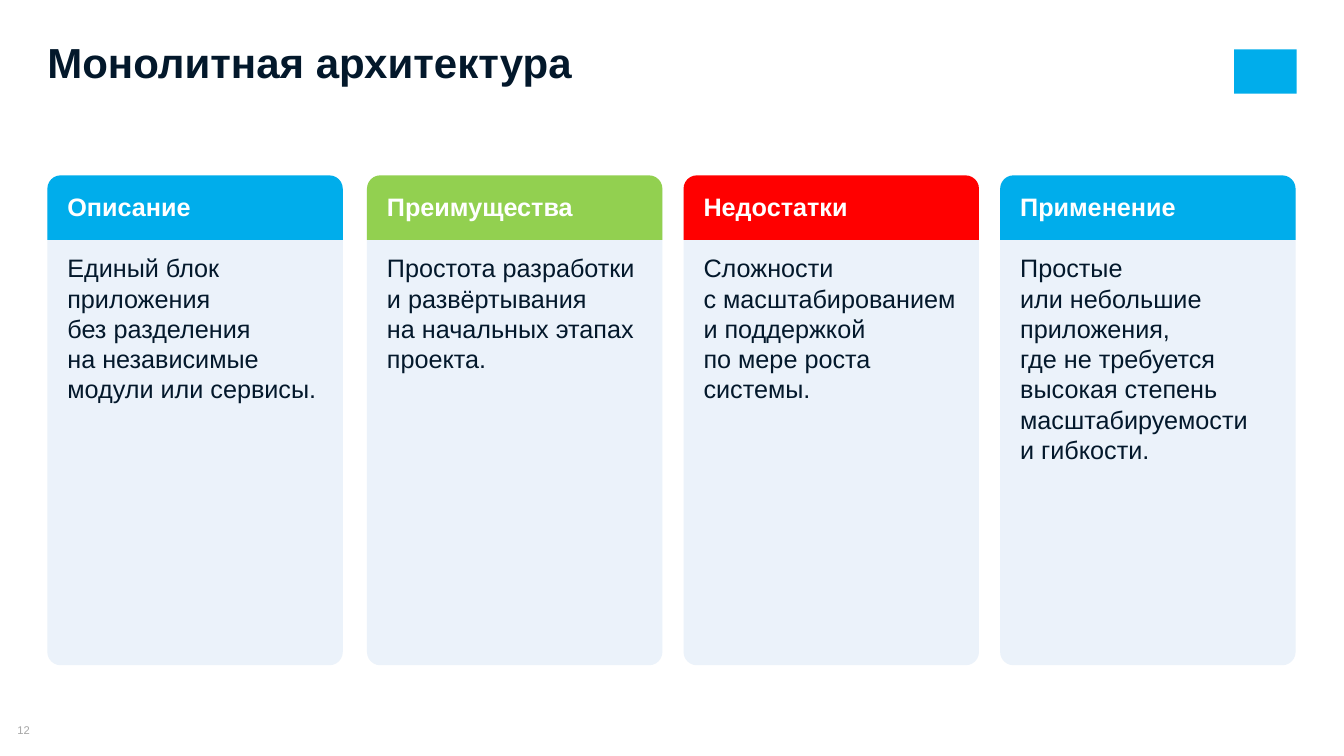
from dataclasses import dataclass

from pptx import Presentation
from pptx.dml.color import RGBColor
from pptx.enum.shapes import MSO_SHAPE as Shape
from pptx.enum.text import MSO_ANCHOR as Anchor, PP_ALIGN as Align
from pptx.util import Emu, Pt

SCALE = 9144  # EMU per px, 100 px to the inch
COLORS = {
    "ink": "03182B",
    "white": "FFFFFF",
    "gray": "A6A6A6",
    "panel": "EBF2FA",
    "blue": "00ADEB",
    "green": "92D050",
    "red": "FF0000",
}
WIDTH = 293
PAD = 16


@dataclass
class Card:
    left: int
    color: str
    head: str
    body: str
    after: int = 12


@dataclass
class Style:
    size: int
    color: str
    bold: bool = False
    after: int = 0
    line: float = 1.0
    align: Align = Align.LEFT
    anchor: Anchor = Anchor.TOP


CARDS = [
    Card(47, "blue", "Описание",
         "Единый блок приложения\nбез разделения \n"
         "на независимые модули или сервисы.", 6),
    Card(364, "green", "Преимущества",
         "Простота разработки\nи развёртывания \n"
         "на начальных этапах проекта."),
    Card(678, "red", "Недостатки",
         "Сложности \nс масштабированием\nи поддержкой \n"
         "по мере роста системы."),
    Card(992, "blue", "Применение",
         "Простые \nили небольшие приложения, \n"
         "где не требуется высокая степень масштабируемости \n"
         "и гибкости."),
]


def px(*values: int) -> list[Emu]:
    return [Emu(v * SCALE) for v in values]


def rgb(name: str) -> RGBColor:
    return RGBColor.from_string(COLORS[name])


def write(shape, text: str, style: Style, inset=(0, 0, 0, 0)) -> None:
    frame = shape.text_frame
    frame.word_wrap = True
    frame.vertical_anchor = style.anchor
    (frame.margin_left, frame.margin_top,
     frame.margin_right, frame.margin_bottom) = px(*inset)
    para = frame.paragraphs[0]
    para.text = text
    para.alignment = style.align
    para.line_spacing = style.line
    para.space_after = Pt(style.after)
    font = para.font
    font.name = "Arial"
    font.size = Pt(style.size)
    font.bold = style.bold
    font.color.rgb = rgb(style.color)


def add_box(slide, kind: Shape, box: tuple, color: str, *corners: float):
    shape = slide.shapes.add_shape(kind, *px(*box))
    shape.shadow.inherit = False
    shape.fill.solid()
    shape.fill.fore_color.rgb = rgb(color)
    shape.line.fill.background()
    for i, corner in enumerate(corners):
        shape.adjustments[i] = corner
    return shape


def add_label(slide, box: tuple, text: str, style: Style) -> None:
    write(slide.shapes.add_textbox(*px(*box)), text, style)


def add_card(slide, card: Card) -> None:
    panel = add_box(slide, Shape.ROUNDED_RECTANGLE,
                    (card.left, 176, WIDTH, 484), "panel", 0.045)
    write(panel, card.body, Style(18, "ink", after=card.after),
          (PAD, 71, PAD, PAD))
    head = add_box(slide, Shape.ROUND_2_SAME_RECTANGLE,
                   (card.left, 174, WIDTH, 64), card.color, 0.206, 0)
    write(head, card.head, Style(18, "white", bold=True, after=4),
          (PAD, 12, PAD, PAD))


def main() -> None:
    deck = Presentation()
    deck.slide_width, deck.slide_height = px(1333, 750)
    slide = deck.slides.add_slide(deck.slide_layouts[6])

    # Corner mark and page number
    add_box(slide, Shape.RECTANGLE, (1224, 49, 62, 44), "blue")
    add_label(slide, (0, 718, 47, 13), "12",
              Style(8, "gray", align=Align.CENTER, anchor=Anchor.MIDDLE))

    # Title
    add_label(slide, (47, 46, 1051, 41), "Монолитная архитектура",
              Style(30, "ink", bold=True, line=0.8))

    # Cards
    for card in CARDS:
        add_card(slide, card)

    deck.save("out.pptx")


if __name__ == "__main__":
    main()
